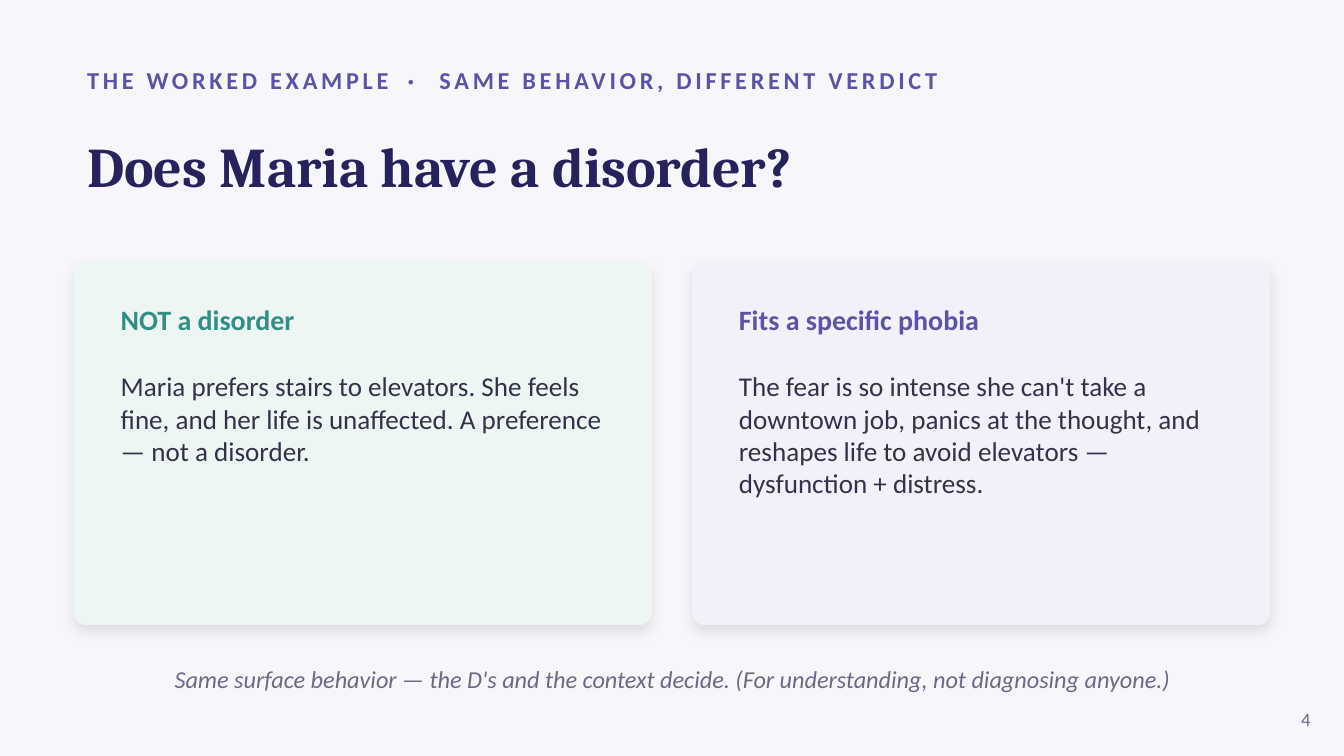
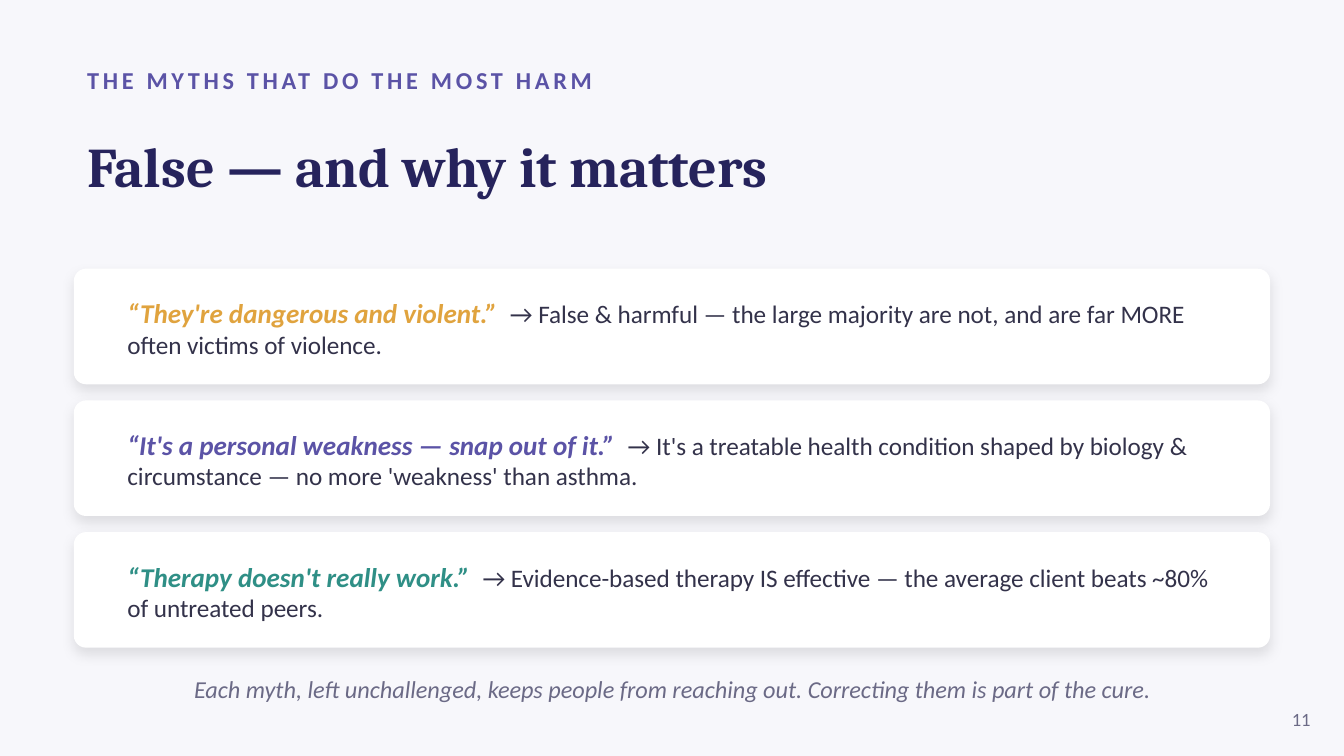
import dataclasses

import lxml.etree
import pptx
import pptx.dml.color
import pptx.enum.shapes
import pptx.enum.text
import pptx.oxml
import pptx.oxml.ns
import pptx.util

ALIGN = pptx.enum.text.PP_ALIGN
ANCHOR = pptx.enum.text.MSO_ANCHOR

# Slide grid: each cell is a tenth of an inch square.
COLS, ROWS = 100, 56.25
WIDTH, HEIGHT = pptx.util.Inches(10), pptx.util.Inches(5.625)

LEFT, SPAN = 5.5, 89  # content margin and content width, in columns


@dataclasses.dataclass(frozen=True)
class Theme:
    body_font: str = "Calibri"
    title_font: str = "Cambria"

    background: str = "F7F7FB"
    white: str = "FFFFFF"
    mint: str = "EEF6F4"
    lilac: str = "F3F0FA"
    navy: str = "26235C"
    ink: str = "33324A"
    muted: str = "6B6A86"
    purple: str = "5B53A6"
    teal: str = "2F8F86"
    amber: str = "E0A33E"

    title: float = 30
    heading: float = 15
    body: float = 14.5
    answer: float = 13.5
    small: float = 13
    number: float = 10

    tracking: float = 2
    wide_gap: float = 5.3  # tracking that widens the eyebrow's separator
    quote_gap: float = 3.3  # tracking that widens the space after a quote


SHADOW = (
    '<a:effectLst xmlns:a="http://schemas.openxmlformats.org/drawingml/2006/main">'
    '<a:outerShdw blurRad="{blur}" dist="{dist}" dir="5400000" algn="bl" '
    'rotWithShape="0"><a:srgbClr val="000000"><a:alpha val="10000"/></a:srgbClr>'
    "</a:outerShdw></a:effectLst>"
).format(blur=pptx.util.Pt(7), dist=pptx.util.Pt(3))


def rgb(color):
    return pptx.dml.color.RGBColor.from_string(color)


def add_run(p, text, *, size, color, font, bold=False, italic=False, tracking=0):
    r = p.add_run()
    r.text = text
    r.font.size = pptx.util.Pt(size)
    r.font.name = font
    r.font.bold = bold
    r.font.italic = italic
    r.font.color.rgb = rgb(color)
    if tracking:
        r._r.get_or_add_rPr().set("spc", str(round(tracking * 100)))


class Deck:
    def __init__(self, theme):
        self.theme = theme
        self.prs = pptx.Presentation()
        self.prs.slide_width, self.prs.slide_height = WIDTH, HEIGHT
        self.slide = None

    def place(self, col, row, cols, rows):
        """Turn a grid position and size into slide lengths."""
        return (round(col * WIDTH / COLS), round(row * HEIGHT / ROWS),
                round(cols * WIDTH / COLS), round(rows * HEIGHT / ROWS))

    def text(self, paragraphs, box, align=ALIGN.LEFT, anchor=ANCHOR.MIDDLE, gap=0):
        """Add a text box; each paragraph is a list of (text, format) runs."""
        tf = self.slide.shapes.add_textbox(*self.place(*box)).text_frame
        tf.word_wrap = True
        tf.vertical_anchor = anchor
        for i, runs in enumerate(paragraphs):
            p = tf.paragraphs[0] if i == 0 else tf.add_paragraph()
            p.alignment = align
            if i:
                p.space_before = pptx.util.Pt(gap)
            for text, fmt in runs:
                add_run(p, text, **{"font": self.theme.body_font, **fmt})

    def card(self, box, fill, radius=0.9):
        """Add a shadowed card with its corner radius in grid cells."""
        sp = self.slide.shapes.add_shape(
            pptx.enum.shapes.MSO_SHAPE.ROUNDED_RECTANGLE, *self.place(*box))
        sp.adjustments[0] = radius / min(box[2:])
        sp.fill.solid()
        sp.fill.fore_color.rgb = rgb(fill)
        sp.line.fill.background()
        sp._element.spPr.append(pptx.oxml.parse_xml(SHADOW))

    def start(self, eyebrow, title, number):
        """Add a slide with its background, eyebrow, title and number."""
        t = self.theme
        self.slide = self.prs.slides.add_slide(self.prs.slide_layouts[6])
        fill = self.slide.background.fill
        fill.solid()
        fill.fore_color.rgb = rgb(t.background)

        fmt = dict(size=t.small, color=t.purple, bold=True, tracking=t.tracking)
        runs = []
        for part in eyebrow:
            if runs:
                runs.append((" · ", {**fmt, "tracking": t.wide_gap}))
            runs.append((part, fmt))
        self.text([runs], (LEFT, 4.2, 90, 3.5))
        self.text([[(title, dict(size=t.title, color=t.navy, bold=True,
                                 font=t.title_font))]], (LEFT, 7.8, SPAN, 9))
        self.text([[(str(number), dict(size=t.number, color=t.muted))]],
                  (93.5, 52, 5, 3), align=ALIGN.RIGHT)

    def takeaway(self, text, row, rows):
        fmt = dict(size=self.theme.small, color=self.theme.muted, italic=True)
        self.text([[(text, fmt)]], (LEFT, row, SPAN, rows), align=ALIGN.CENTER)

    def verdicts(self, items, row=19.5, rows=27, gutter=3, pad=2.5):
        """Add equal side-by-side cards of (heading, body, accent, fill)."""
        t = self.theme
        cols = (SPAN - gutter * (len(items) - 1)) / len(items)
        for i, (heading, body, accent, fill) in enumerate(items):
            col = LEFT + i * (cols + gutter)
            self.card((col, row, cols, rows), fill)
            self.text(
                [[(heading, dict(size=t.heading, color=accent, bold=True))],
                 [(body, dict(size=t.body, color=t.ink))]],
                (col + pad, row + pad, cols - 2 * pad, rows - 2 * pad),
                anchor=ANCHOR.TOP, gap=18)

    def myths(self, items, row=20, rows=8.6, step=9.8, pad=3):
        """Add stacked full-width cards of (quote, answer, accent)."""
        t = self.theme
        for i, (quote, answer, accent) in enumerate(items):
            top = row + i * step
            fmt = dict(size=t.body, color=accent, bold=True, italic=True)
            self.card((LEFT, top, SPAN, rows), t.white)
            self.text(
                [[(quote, fmt), (" ", {**fmt, "tracking": t.quote_gap}),
                  (answer, dict(size=t.answer, color=t.ink))]],
                (LEFT + pad, top + 0.5, SPAN - 2 * pad, 7.8))


def main():
    t = Theme()
    deck = Deck(t)

    deck.start(["THE WORKED EXAMPLE", "SAME BEHAVIOR, DIFFERENT VERDICT"],
               "Does Maria have a disorder?", 4)
    deck.verdicts([
        ("NOT a disorder",
         "Maria prefers stairs to elevators. She feels fine, and her life is "
         "unaffected. A preference — not a disorder.", t.teal, t.mint),
        ("Fits a specific phobia",
         "The fear is so intense she can't take a downtown job, panics at the "
         "thought, and reshapes life to avoid elevators — dysfunction + distress.",
         t.purple, t.lilac),
    ])
    deck.takeaway("Same surface behavior — the D's and the context decide. "
                  "(For understanding, not diagnosing anyone.)", 48.5, 4)

    deck.start(["THE MYTHS THAT DO THE MOST HARM"], "False — and why it matters", 11)
    deck.myths([
        ("“They're dangerous and violent.”",
         "→ False & harmful — the large majority are not, and are far MORE often "
         "victims of violence.", t.amber),
        ("“It's a personal weakness — snap out of it.”",
         "→ It's a treatable health condition shaped by biology & circumstance — "
         "no more 'weakness' than asthma.", t.purple),
        ("“Therapy doesn't really work.”",
         "→ Evidence-based therapy IS effective — the average client beats ~80% "
         "of untreated peers.", t.teal),
    ])
    deck.takeaway("Each myth, left unchallenged, keeps people from reaching out. "
                  "Correcting them is part of the cure.", 49.5, 3.5)

    deck.prs.save("out.pptx")


if __name__ == "__main__":
    main()
